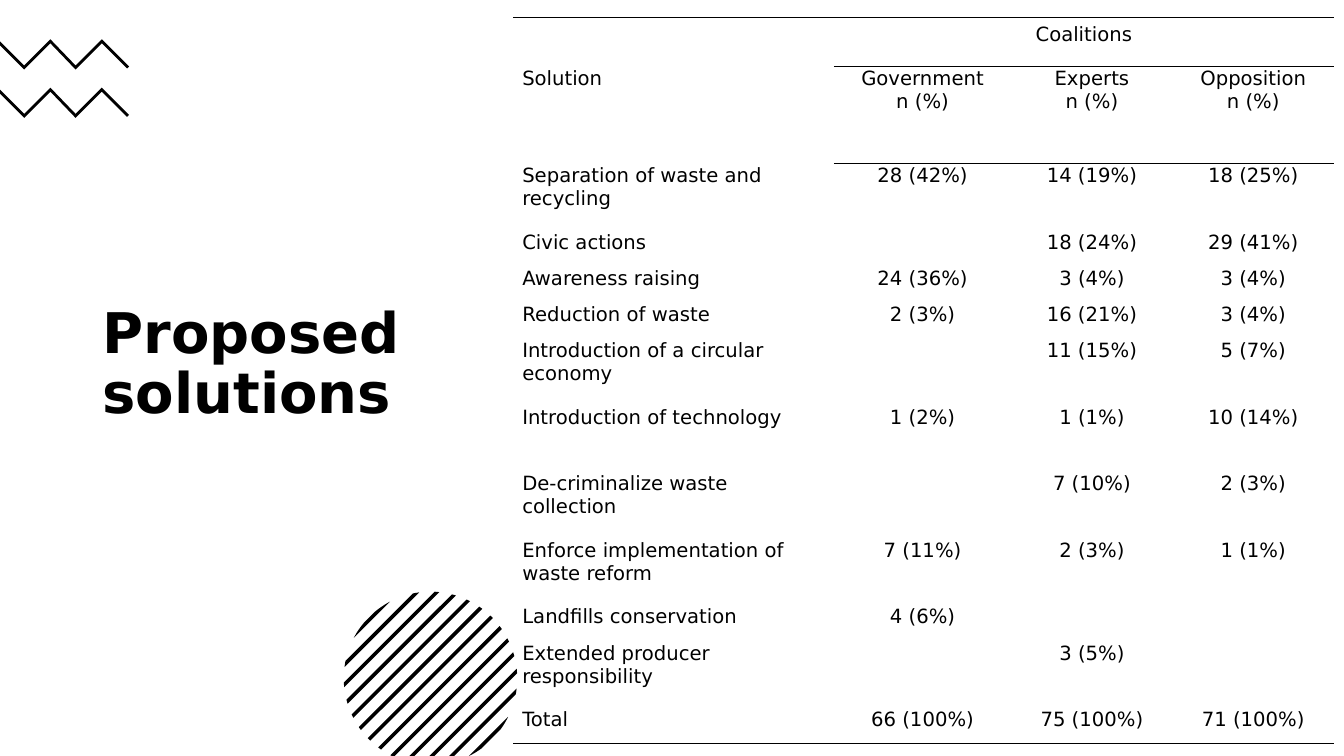
from math import sqrt

from lxml import etree
from pptx import Presentation
from pptx.dml.color import RGBColor
from pptx.enum import text
from pptx.oxml import ns
from pptx.util import Inches, Pt

FONT = "DejaVu Sans"
BLACK, WHITE = "000000", "FFFFFF"
NO_GRID_STYLE = "{2D5ABB26-0587-4C30-8999-92F81FD0307C}"
SLIDE_WIDTH, SLIDE_HEIGHT = 13.33, 7.5

TITLE = "Proposed solutions"
GROUP_HEADING = "Coalitions"
HEADINGS = ("Solution", "Government\nn (%)", "Experts\nn (%)", "Opposition\nn (%)")
SOLUTIONS = [
    ("Separation of waste and recycling", "28 (42%)", "14 (19%)", "18 (25%)"),
    ("Civic actions", "", "18 (24%)", "29 (41%)"),
    ("Awareness raising", "24 (36%)", "3 (4%)", "3 (4%)"),
    ("Reduction of waste", "2 (3%)", "16 (21%)", "3 (4%)"),
    ("Introduction of a circular economy", "", "11 (15%)", "5 (7%)"),
    ("Introduction of technology", "1 (2%)", "1 (1%)", "10 (14%)"),
    ("De-criminalize waste collection", "", "7 (10%)", "2 (3%)"),
    ("Enforce implementation of waste reform", "7 (11%)", "2 (3%)", "1 (1%)"),
    ("Landfills conservation", "4 (6%)", "", ""),
    ("Extended producer responsibility", "", "3 (5%)", ""),
    ("Total", "66 (100%)", "75 (100%)", "71 (100%)"),
]
COLUMN_WIDTHS = (3.18, 1.76, 1.6, 1.6)
HEADING_HEIGHTS = [0.49, 0.96]
TALL_ROW, SHORT_ROW = 0.66, 0.36
LONGEST_SHORT_LABEL = 22  # longer labels get a tall row

ZIGZAG_TOPS = (0.39, 0.87)
ZIGZAG = [
    (0, 0.02), (0.24, 0.26), (0.5, 0), (0.75, 0.26), (1.01, 0), (1.28, 0.27),
    (1.26, 0.29), (1.01, 0.04), (0.75, 0.3), (0.5, 0.04), (0.24, 0.3), (0, 0.06),
]

CIRCLE_X, CIRCLE_Y, RADIUS = 4.27, 6.73, 0.86
STRIPE_COUNT, STRIPE_STEP, STRIPE_WIDTH = 13, 0.2, 0.05
ARC_STEPS = 8


def color(hex_code):
    return RGBColor.from_string(hex_code)


def add_text(para, words, size, bold=False):
    span = para.add_run()
    span.text = words
    span.font.name, span.font.size, span.font.bold = FONT, Pt(size), bold
    span.font.color.rgb = color(BLACK)


def add_outline(shapes, points):
    """Draw a closed black shape through points given in inches."""
    corners = [(Inches(x), Inches(y)) for x, y in points]
    builder = shapes.build_freeform(*corners[0], scale=1.0)
    builder.add_line_segments(corners[1:], close=True)
    outline = builder.convert_to_shape()
    outline.fill.solid()
    outline.fill.fore_color.rgb = color(BLACK)
    outline.line.fill.background()
    outline.shadow.inherit = False


def stripe_points(near, far):
    """Outline a diagonal stripe; near and far are dx + dy from the circle's centre."""
    right, left = [], []
    for step in range(ARC_STEPS + 1):
        across = near + (far - near) * step / ARC_STEPS
        reach = sqrt(max(0, 2 * RADIUS ** 2 - across ** 2))
        slide_edge = across - 2 * (SLIDE_HEIGHT - CIRCLE_Y)
        for side, along in ((right, reach), (left, max(-reach, slide_edge))):
            side.append((CIRCLE_X + (across + along) / 2,
                         CIRCLE_Y + (across - along) / 2))
    return right + left[::-1]


def add_striped_circle(page):
    circle = page.shapes.add_group_shape()
    limit = RADIUS * sqrt(2)
    for index in range(STRIPE_COUNT):
        far = (index - STRIPE_COUNT // 2) * (STRIPE_STEP - 0.003) + 0.02
        add_outline(circle.shapes, stripe_points(max(far - STRIPE_WIDTH, -limit),
                                                 min(far, limit)))


def add_title(page):
    box = page.shapes.add_textbox(Inches(0.92), Inches(1.31), Inches(3.5), Inches(4.63))
    box.text_frame.word_wrap = True
    box.text_frame.vertical_anchor = text.MSO_ANCHOR.MIDDLE
    para = box.text_frame.paragraphs[0]
    para.line_spacing = 0.9
    add_text(para, TITLE, 40, bold=True)


def add_border(cell, *edges):
    """Add black edges, named lnT or lnB, ahead of the cell's fill."""
    properties = cell._tc.get_or_add_tcPr()
    for position, edge in enumerate(edges):
        line = etree.Element(ns.qn("a:" + edge), w=str(Pt(1)))
        fill = etree.SubElement(line, ns.qn("a:solidFill"))
        etree.SubElement(fill, ns.qn("a:srgbClr"), val=BLACK)
        properties.insert(position, line)


def fill_cell(cell, words, centered, insets=(0.09, 0.01, 0.09, 0)):
    cell.fill.background()
    (cell.margin_left, cell.margin_top,
     cell.margin_right, cell.margin_bottom) = map(Inches, insets)
    frame = cell.text_frame
    for index, line in enumerate(words.split("\n")):
        para = frame.add_paragraph() if index else frame.paragraphs[0]
        if centered:
            para.alignment = text.PP_ALIGN.CENTER
        if line:
            add_text(para, line, 14)


def add_solutions_table(page):
    rows = [("", GROUP_HEADING, "", ""), HEADINGS] + SOLUTIONS
    heights = HEADING_HEIGHTS + [
        TALL_ROW if len(row[0]) > LONGEST_SHORT_LABEL else SHORT_ROW for row in SOLUTIONS]
    graphic = page.shapes.add_table(
        len(rows), len(COLUMN_WIDTHS), Inches(5.09), Inches(0.17),
        Inches(sum(COLUMN_WIDTHS)), Inches(sum(heights)))
    for style in graphic.element.iter(ns.qn("a:tableStyleId")):
        style.text = NO_GRID_STYLE
    table = graphic.table
    table.first_row = table.horz_banding = False
    for column, width in zip(table.columns, COLUMN_WIDTHS):
        column.width = Inches(width)
    for row, height in zip(table.rows, heights):
        row.height = Inches(height)
    for row_index, row in enumerate(rows):
        for column_index, words in enumerate(row):
            cell = table.cell(row_index, column_index)
            if words == GROUP_HEADING:
                fill_cell(cell, words, True, (0.12, 0.06, 0.12, 0.06))
            else:
                fill_cell(cell, words, column_index > 0)
            if row_index == 0:
                add_border(cell, *(("lnT", "lnB") if column_index else ("lnT",)))
            elif row_index == 1 and column_index:
                add_border(cell, "lnT")
            elif row_index == len(rows) - 1:
                add_border(cell, "lnB")
    table.cell(0, 1).merge(table.cell(0, 3))


def main():
    deck = Presentation()
    deck.slide_width, deck.slide_height = Inches(SLIDE_WIDTH), Inches(SLIDE_HEIGHT)
    page = deck.slides.add_slide(deck.slide_layouts[6])
    page.background.fill.solid()
    page.background.fill.fore_color.rgb = color(WHITE)
    add_striped_circle(page)
    add_title(page)
    for top in ZIGZAG_TOPS:
        add_outline(page.shapes, [(x, top + y) for x, y in ZIGZAG])
    add_solutions_table(page)
    deck.save("out.pptx")


if __name__ == "__main__":
    main()
